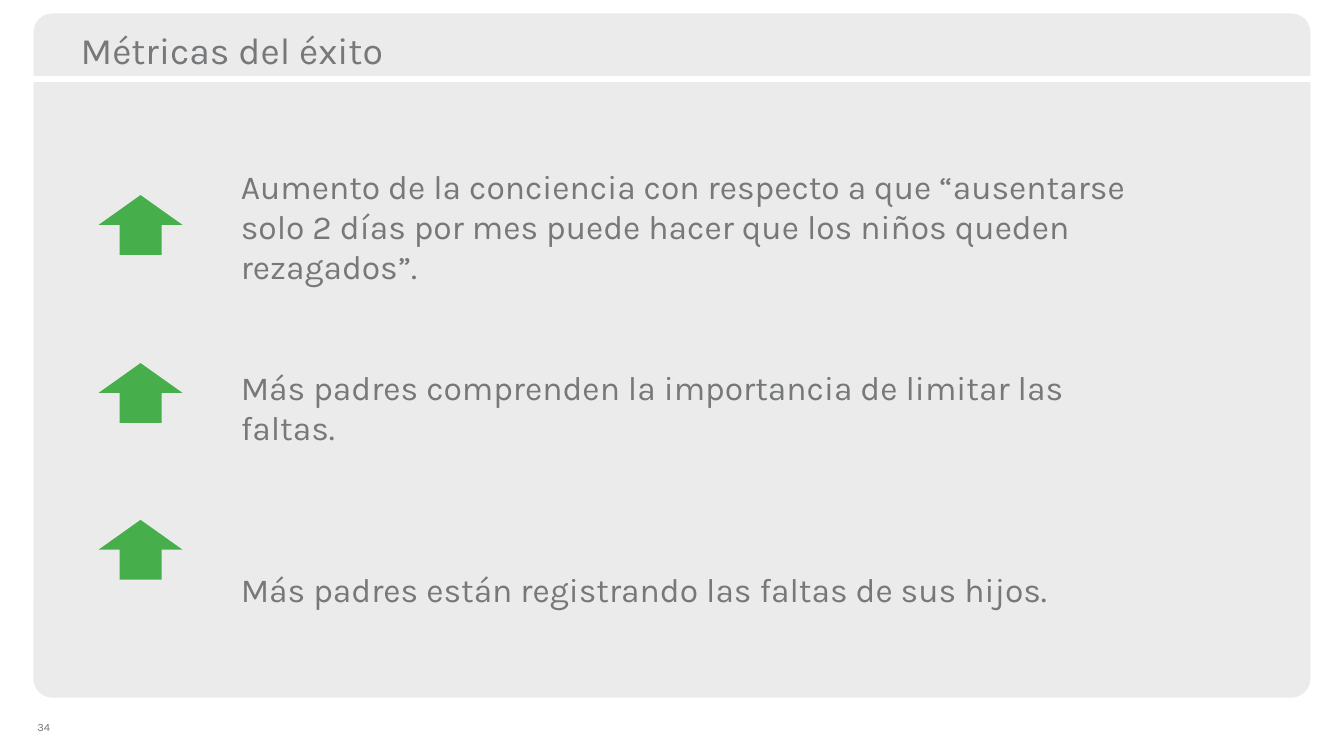
from dataclasses import dataclass

from lxml.etree import SubElement
from pptx import Presentation
from pptx.dml.color import RGBColor
from pptx.enum.shapes import MSO_CONNECTOR, MSO_SHAPE
from pptx.enum.text import MSO_ANCHOR, MSO_AUTO_SIZE, PP_ALIGN
from pptx.oxml.ns import qn
from pptx.util import Pt


@dataclass(frozen=True)
class Theme:
    font: str = "Karla"
    text: RGBColor = RGBColor(0x77, 0x78, 0x7A)
    panel: RGBColor = RGBColor(0xEB, 0xEB, 0xEB)
    divider: RGBColor = RGBColor(0xFF, 0xFF, 0xFF)
    arrow: RGBColor = RGBColor(0x46, 0xAE, 0x4A)
    title_size: float = 20
    body_size: float = 18
    number_size: float = 6


class SlideBuilder:
    def __init__(self, slide, theme):
        self.slide = slide
        self.theme = theme

    def shape(self, kind, left, top, width, height, color):
        shape = self.slide.shapes.add_shape(kind, Pt(left), Pt(top), Pt(width), Pt(height))
        shape.shadow.inherit = False
        shape.fill.solid()
        shape.fill.fore_color.rgb = color
        shape.line.fill.background()
        return shape

    def panel(self, left, top, width, height, radius):
        panel = self.shape(MSO_SHAPE.ROUNDED_RECTANGLE, left, top, width, height,
                           self.theme.panel)
        panel.adjustments[0] = radius / min(width, height)

    def divider(self, left, right, y, weight):
        line = self.slide.shapes.add_connector(
            MSO_CONNECTOR.STRAIGHT, Pt(left), Pt(y), Pt(right), Pt(y))
        line.line.color.rgb = self.theme.divider
        line.line.width = Pt(weight)
        SubElement(line._element.spPr, qn("a:effectLst"))

    def up_arrow(self, left, top, width, height):
        self.shape(MSO_SHAPE.UP_ARROW, left, top, width, height, self.theme.arrow)

    def frame(self, shape, left, top, width, height, inset_top=0):
        """Place a text shape and return its frame, top-anchored with no side insets."""
        shape.left, shape.top = Pt(left), Pt(top)
        shape.width, shape.height = Pt(width), Pt(height)
        frame = shape.text_frame
        frame.margin_left = frame.margin_right = frame.margin_bottom = 0
        frame.margin_top = Pt(inset_top)
        frame.vertical_anchor = MSO_ANCHOR.TOP
        frame.auto_size = MSO_AUTO_SIZE.NONE
        frame.word_wrap = True
        return frame

    def format(self, paragraph, size, indent, space_before=0):
        paragraph.alignment = PP_ALIGN.LEFT
        paragraph.space_before = Pt(space_before)
        properties = paragraph._p.get_or_add_pPr()
        properties.set("marL", str(Pt(indent)))
        properties.set("indent", "0")
        SubElement(properties, qn("a:buNone"))
        for run in paragraph.runs:
            run.font.name = self.theme.font
            run.font.size = Pt(size)
            run.font.color.rgb = self.theme.text

    def title(self, text, left, top, width, height):
        frame = self.frame(self.slide.shapes.title, left, top, width, height, inset_top=3.6)
        frame.text = text
        self.format(frame.paragraphs[0], self.theme.title_size, indent=13)

    def body(self, items, left, top, width, height):
        """Fill the body placeholder with (text, space before) items."""
        frame = self.frame(self.slide.placeholders[1], left, top, width, height)
        frame.text = "\n".join(text for text, _ in items)
        for paragraph, (_, space_before) in zip(frame.paragraphs, items):
            self.format(paragraph, self.theme.body_size, 29.5, space_before)

    def page_number(self, text, left, top, width, height):
        box = self.slide.shapes.add_textbox(0, 0, 0, 0)
        frame = self.frame(box, left, top, width, height)
        frame.text = text
        paragraph = frame.paragraphs[0]
        paragraph.line_spacing = Pt(7.8)
        self.format(paragraph, self.theme.number_size, indent=2)


def main():
    presentation = Presentation()
    presentation.slide_width, presentation.slide_height = Pt(720), Pt(405)
    slide = presentation.slides.add_slide(presentation.slide_layouts[1])
    builder = SlideBuilder(slide, Theme())

    builder.panel(18, 7.2, 684, 366.5, radius=10)
    builder.divider(0, 720, 42.4, 3.25)
    builder.title("Métricas del éxito", 30.2, 10.8, 659.5, 28)
    for top in (104.5, 194.5, 278.5):
        builder.up_arrow(52.8, top, 45, 32)

    line = 21.6
    builder.body([
        ("Aumento de la conciencia con respecto a que “ausentarse solo 2 días por mes "
         "puede hacer que los niños queden rezagados”.", 0),
        ("Más padres comprenden la importancia de limitar las faltas.", 2 * line),
        ("Más padres están registrando las faltas de sus hijos.", 3 * line),
    ], 99.5, 88.6, 521, 240)
    builder.page_number("34", 18, 385.2, 11.5, 8.6)

    # The placeholders sit behind the panel by default, so bring them forward.
    shapes = slide.shapes._spTree
    for placeholder in list(slide.placeholders):
        shapes.append(placeholder._element)
    presentation.save("out.pptx")


if __name__ == "__main__":
    main()
